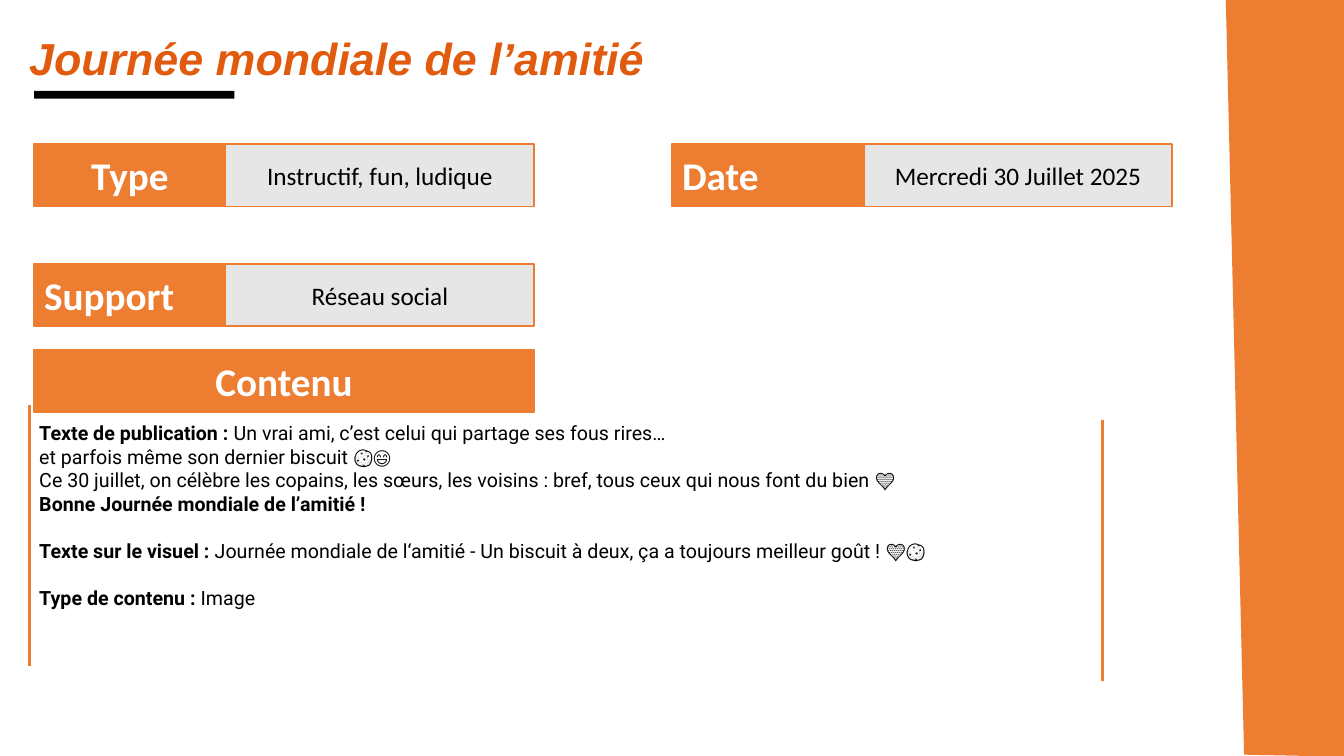
from lxml import etree
from pptx import Presentation
from pptx.dml.color import RGBColor
from pptx.enum.shapes import MSO_CONNECTOR, MSO_SHAPE
from pptx.enum.text import MSO_ANCHOR, MSO_AUTO_SIZE, PP_ALIGN
from pptx.oxml.ns import qn
from pptx.util import Cm, Pt

RECTANGLE = MSO_SHAPE.RECTANGLE
STRAIGHT = MSO_CONNECTOR.STRAIGHT
TOP, MIDDLE = MSO_ANCHOR.TOP, MSO_ANCHOR.MIDDLE
NO_FIT = MSO_AUTO_SIZE.NONE
LEFT, CENTER, JUSTIFY = PP_ALIGN.LEFT, PP_ALIGN.CENTER, PP_ALIGN.JUSTIFY

COLORS = {
    "orange": "ED7D31",
    "title": "E15B0F",
    "grey": "E7E6E6",
    "black": "000000",
    "white": "FFFFFF",
}

LABEL_WIDTH, VALUE_WIDTH, FIELD_HEIGHT = 4.83, 7.77, 1.57
LEFT_COLUMN, RIGHT_COLUMN = 0.86, 16.94
FIELDS = [
    (LEFT_COLUMN, 3.63, "Type", CENTER, "Instructif, fun, ludique"),
    (RIGHT_COLUMN, 3.63, "Date", LEFT, "Mercredi 30 Juillet 2025"),
    (LEFT_COLUMN, 6.65, "Support", LEFT, "Réseau social"),
]

# Each paragraph is a list of (text, bold) spans; a newline is a line break.
CONTENT = [
    [
        ("Texte de publication : ", True),
        ("Un vrai ami, c’est celui qui partage ses fous rires…\n"
         "et parfois même son dernier biscuit 🍪😄\n"
         "Ce 30 juillet, on célèbre les copains, les sœurs, les voisins : "
         "bref, tous ceux qui nous font du bien 💛\n", False),
        ("Bonne Journée mondiale de l’amitié !", True),
    ],
    [
        ("Texte sur le visuel : ", True),
        ("Journée mondiale de l‘amitié - Un biscuit à deux, "
         "ça a toujours meilleur goût ! 💛🍪", False),
    ],
    [("Type de contenu : ", True), ("Image", False)],
]


def color(name):
    return RGBColor.from_string(COLORS[name])


def style_font(font, name, size, color_name, bold=False):
    font.name, font.size, font.bold = name, Pt(size), bold
    font.color.rgb = color(color_name)


def paint(shape, fill, line=None):
    shape.shadow.inherit = False
    shape.fill.solid()
    shape.fill.fore_color.rgb = color(fill)
    if line:
        shape.line.color.rgb = color(line)
        shape.line.width = Pt(1)
    else:
        shape.line.fill.background()


def add_box(page, left, top, width, height, fill, line=None):
    box = page.shapes.add_shape(RECTANGLE, Cm(left), Cm(top), Cm(width), Cm(height))
    paint(box, fill, line)
    return box


def add_cell(page, left, top, width, fill, text, align, size, text_color, bold):
    box = add_box(page, left, top, width, FIELD_HEIGHT, fill, "orange")
    box.text_frame.word_wrap = True
    box.text_frame.vertical_anchor = MIDDLE
    para = box.text_frame.paragraphs[0]
    para.text, para.alignment = text, align
    style_font(para.font, "Calibri", size, text_color, bold)


def add_label(page, left, top, width, text, align):
    add_cell(page, left, top, width, "orange", text, align, 28, "white", True)


def add_field(page, left, top, label, align, value):
    """Place an orange label with its grey value to the right."""
    add_label(page, left, top, LABEL_WIDTH, label, align)
    add_cell(page, left + LABEL_WIDTH, top, VALUE_WIDTH, "grey", value,
             CENTER, 18, "black", False)


def add_side_panel(page, left, top, width, height):
    """Place the slanted orange band along the right edge."""
    slant = 0.46
    builder = page.shapes.build_freeform(Cm(left), Cm(top))
    builder.add_line_segments([
        (Cm(left + width), Cm(top)),
        (Cm(left + width), Cm(top + height)),
        (Cm(left + slant), Cm(top + height - 0.05)),
    ], close=True)
    paint(builder.convert_to_shape(), "orange", "orange")


def add_title(page, left, top, width, height):
    title = page.shapes.title
    title.left, title.top = Cm(left), Cm(top)
    title.width, title.height = Cm(width), Cm(height)
    frame = title.text_frame
    frame.auto_size, frame.vertical_anchor = NO_FIT, TOP
    para = frame.paragraphs[0]
    para.text, para.alignment = "Journée mondiale de l’amitié", JUSTIFY
    style_font(para.font, "Arial", 32, "title", True)
    para.font.italic = True
    add_box(page, left + 0.38, top + 1.65, 5.05, 0.2, "black")


def add_rule(page, left, top, length):
    rule = page.shapes.add_connector(
        STRAIGHT, Cm(left), Cm(top), Cm(left), Cm(top + length))
    rule.line.color.rgb = color("orange")
    rule.line.width = Pt(2.25)
    etree.SubElement(rule._element.spPr, qn("a:effectLst"))


def add_spans(para, text, bold):
    for index, line in enumerate(text.split("\n")):
        if index:
            para.add_line_break()
        if line:
            span = para.add_run()
            span.text, span.font.bold = line, bold


def add_content(page, left, top, width, height):
    """Place the heading, the publication text and its two side rules."""
    add_label(page, LEFT_COLUMN, top - 1.68, LABEL_WIDTH + VALUE_WIDTH, "Contenu", CENTER)
    add_rule(page, left, top - 0.28, 6.58)
    add_rule(page, left + width - 0.23, top + 0.1, 6.58)
    box = page.shapes.add_textbox(Cm(left), Cm(top), Cm(width), Cm(height))
    frame = box.text_frame
    frame.word_wrap = True
    for index, spans in enumerate(CONTENT):
        para = frame.add_paragraph() if index else frame.paragraphs[0]
        style_font(para.font, "Roboto", 14, "black")
        if index:
            para.space_before = Pt(16.8)
        for text, bold in spans:
            add_spans(para, text, bold)


def main():
    deck = Presentation()
    deck.slide_width, deck.slide_height = Cm(33.87), Cm(19.05)
    page = deck.slides.add_slide(deck.slide_layouts.get_by_name("Title Only"))
    add_side_panel(page, 30.91, 0, 2.96, 19.05)
    add_title(page, 0.48, 0.64, 28.02, 1.32)
    for field in FIELDS:
        add_field(page, *field)
    add_content(page, 0.74, 10.49, 27.28, 5.05)
    deck.save("out.pptx")


if __name__ == "__main__":
    main()
